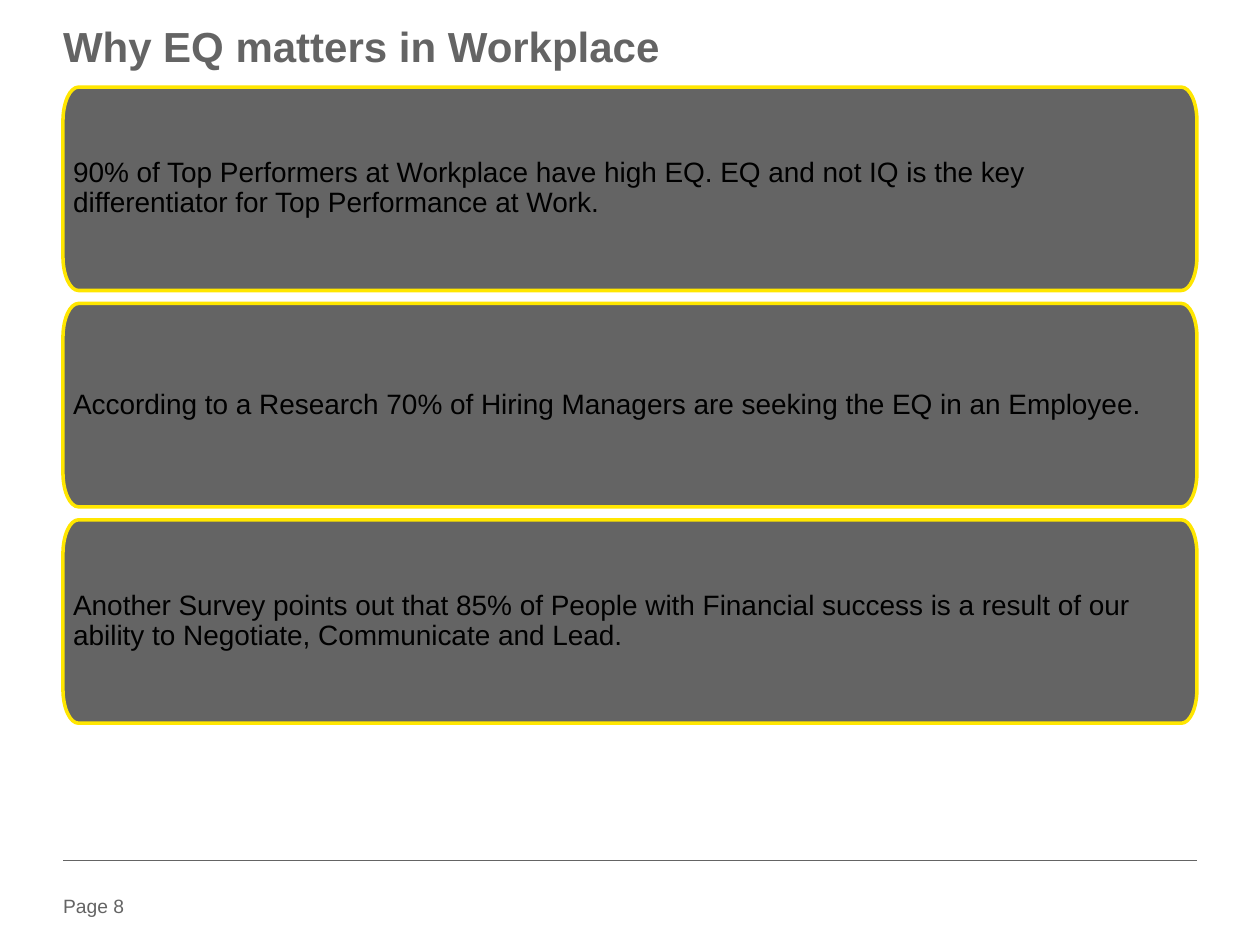
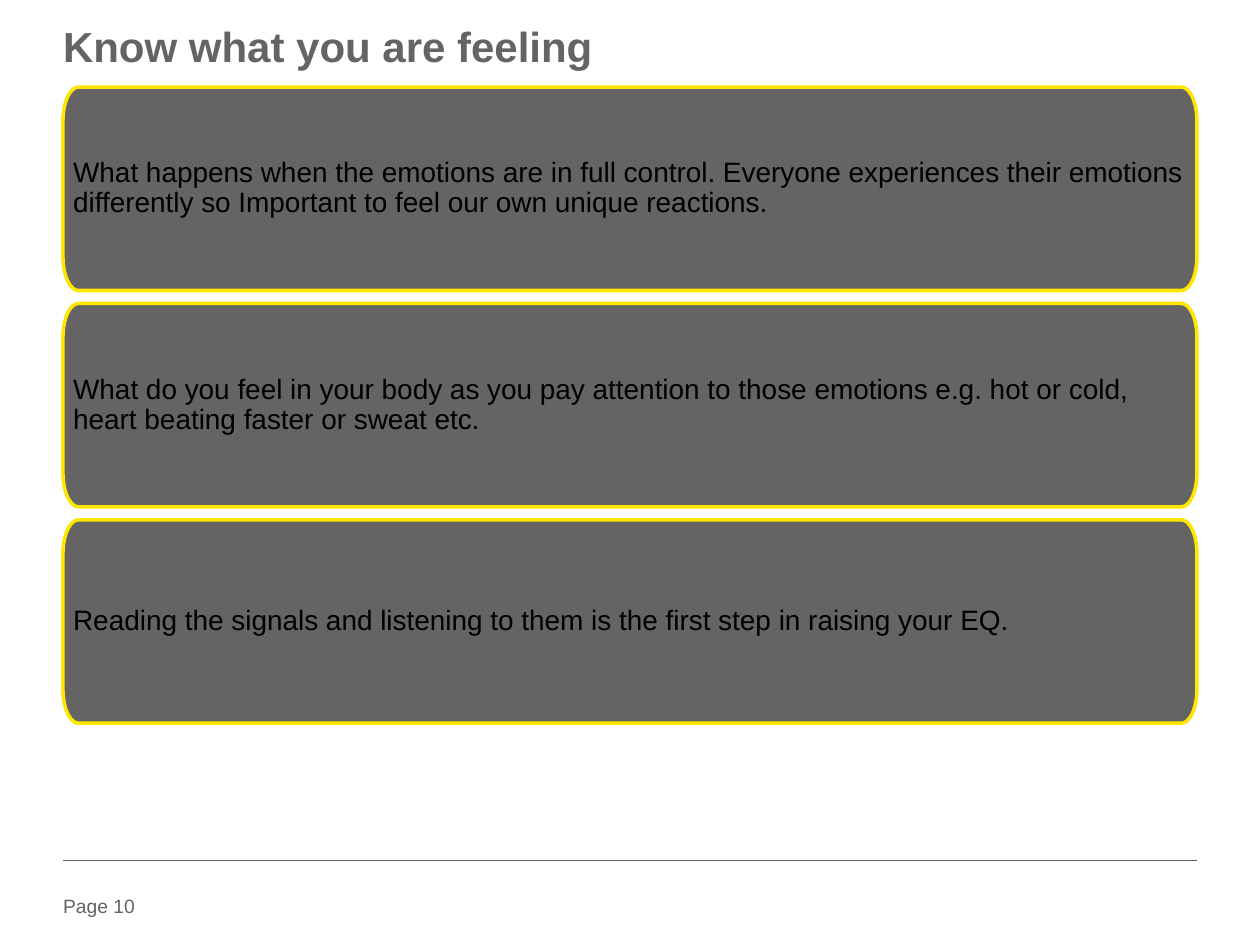
import lxml.etree
import pptx
import pptx.dml.color
import pptx.enum.shapes
import pptx.enum.text
import pptx.oxml.ns
import pptx.util

Pt = pptx.util.Pt
qn = pptx.oxml.ns.qn
LEFT = pptx.enum.text.PP_ALIGN.LEFT
TOP = pptx.enum.text.MSO_ANCHOR.TOP
MIDDLE = pptx.enum.text.MSO_ANCHOR.MIDDLE

COLOURS = {"grey": "646464", "yellow": "FFE600", "black": "000000"}
FONT = "Arial"

# Boxes are left, top, width, height in points
TITLE_BOX = (36, 16, 648, 26.6)
TITLE_RULE_TOP = 82.1
CARDS_BOX = (36, 49.8, 648, 363.5)
FOOTER_BOX = (36, 491.8, 648, 35.2)
CARD_GAP = 7.4
CORNER_X, CORNER_Y = 8.9, 19.4
CURVE = 0.55

SLIDES = [
    ("Why EQ matters in Workplace", 8, [
        "90% of Top Performers at Workplace have high EQ. EQ and not IQ is "
        "the key differentiator for Top Performance at Work.",
        "According to a Research 70% of Hiring Managers are seeking the EQ "
        "in an Employee.",
        "Another Survey points out that 85% of People with Financial success "
        "is a result of our ability to Negotiate, Communicate and Lead.",
    ]),
    ("Know what you are feeling", 10, [
        "What happens when the emotions are in full control. Everyone "
        "experiences their emotions differently so Important to feel our own "
        "unique reactions.",
        "What do you feel in your body as you pay attention to those emotions "
        "e.g. hot or cold, heart beating faster or sweat etc.",
        "Reading the signals and listening to them is the first step in "
        "raising your EQ.",
    ]),
]


def rgb(name):
    return pptx.dml.color.RGBColor.from_string(COLOURS[name])


def write_text(sp, text, size, colour, bold=False, inset=0, spacing=1.0,
               anchor=TOP):
    """Fill a shape with one left-aligned paragraph."""
    tf = sp.text_frame
    tf.word_wrap = True
    tf.auto_size = pptx.enum.text.MSO_AUTO_SIZE.NONE
    tf.vertical_anchor = anchor
    tf.margin_left = tf.margin_right = Pt(inset)
    tf.margin_top = tf.margin_bottom = Pt(inset)
    p = tf.paragraphs[0]
    p.alignment = LEFT
    p.line_spacing = spacing
    r = p.add_run()
    r.text = text
    r.font.name = FONT
    r.font.size = Pt(size)
    r.font.bold = bold
    r.font.color.rgb = rgb(colour)


def add_rule(slide, left, top, width, colour, weight):
    rule = slide.shapes.add_connector(
        pptx.enum.shapes.MSO_CONNECTOR.STRAIGHT,
        Pt(left), Pt(top), Pt(left + width), Pt(top))
    rule.line.color.rgb = rgb(colour)
    rule.line.width = Pt(weight)
    lxml.etree.SubElement(rule._element.spPr, qn("a:effectLst"))


def add_title(slide, box, text):
    left, top, width, height = box
    add_rule(slide, left, TITLE_RULE_TOP, width, "yellow", 1.5)
    sp = slide.shapes.title
    sp.left, sp.top, sp.width, sp.height = map(Pt, box)
    write_text(sp, text, 24, "grey", bold=True, spacing=0.85)


def round_corners(sp):
    """Turn every other segment of an eight-sided freeform into a curve."""
    points = [(int(pt.get("x")), int(pt.get("y")))
              for pt in sp._element.xpath(".//a:pt")]
    segments = sp._element.xpath(".//a:lnTo")
    for i in range(0, len(segments), 2):
        (x0, y0), (x1, y1) = points[i], points[i + 1]
        kx, ky = (x0, y1) if i % 4 == 0 else (x1, y0)
        curve = lxml.etree.Element(qn("a:cubicBezTo"))
        for x, y in ((x0 + CURVE * (kx - x0), y0 + CURVE * (ky - y0)),
                     (x1 + CURVE * (kx - x1), y1 + CURVE * (ky - y1)),
                     (x1, y1)):
            lxml.etree.SubElement(curve, qn("a:pt"),
                                  x=str(round(x)), y=str(round(y)))
        segments[i].getparent().replace(segments[i], curve)


def add_card(slide, box, text):
    left, top, width, height = box
    right, bottom = left + width, top + height
    start, *rest = [(Pt(x), Pt(y)) for x, y in (
        (left, top + CORNER_Y), (left + CORNER_X, top),
        (right - CORNER_X, top), (right, top + CORNER_Y),
        (right, bottom - CORNER_Y), (right - CORNER_X, bottom),
        (left + CORNER_X, bottom), (left, bottom - CORNER_Y))]
    builder = slide.shapes.build_freeform(*start)
    builder.add_line_segments(rest, close=True)
    sp = builder.convert_to_shape()
    round_corners(sp)
    sp.shadow.inherit = False
    sp.fill.solid()
    sp.fill.fore_color.rgb = rgb("grey")
    sp.line.color.rgb = rgb("yellow")
    sp.line.width = Pt(2)
    write_text(sp, text, 16, "black", inset=5.8, spacing=0.9, anchor=MIDDLE)


def add_cards(slide, box, texts):
    """Stack equal cards from top to bottom of the box."""
    left, top, width, height = box
    card_height = (height - CARD_GAP * (len(texts) - 1)) / len(texts)
    for i, text in enumerate(texts):
        card_top = top + i * (card_height + CARD_GAP)
        add_card(slide, (left, card_top, width, card_height), text)


def add_footer(slide, box, page):
    """Draw the rule along the top of the box and the page label at its foot."""
    left, top, width, height = box
    add_rule(slide, left, top, width, "grey", 0.25)
    label_height = 15.8
    label = slide.shapes.add_textbox(
        Pt(left), Pt(top + height - label_height), Pt(57), Pt(label_height))
    write_text(label, f"Page {page}", 11, "grey")


def add_card_slide(prs, title, page, texts):
    slide = prs.slides.add_slide(prs.slide_layouts.get_by_name("Title Only"))
    add_footer(slide, FOOTER_BOX, page)
    add_title(slide, TITLE_BOX, title)
    add_cards(slide, CARDS_BOX, texts)


def main():
    prs = pptx.Presentation()
    prs.slide_width, prs.slide_height = Pt(720), Pt(540)
    for title, page, texts in SLIDES:
        add_card_slide(prs, title, page, texts)
    prs.save("out.pptx")


if __name__ == "__main__":
    main()
